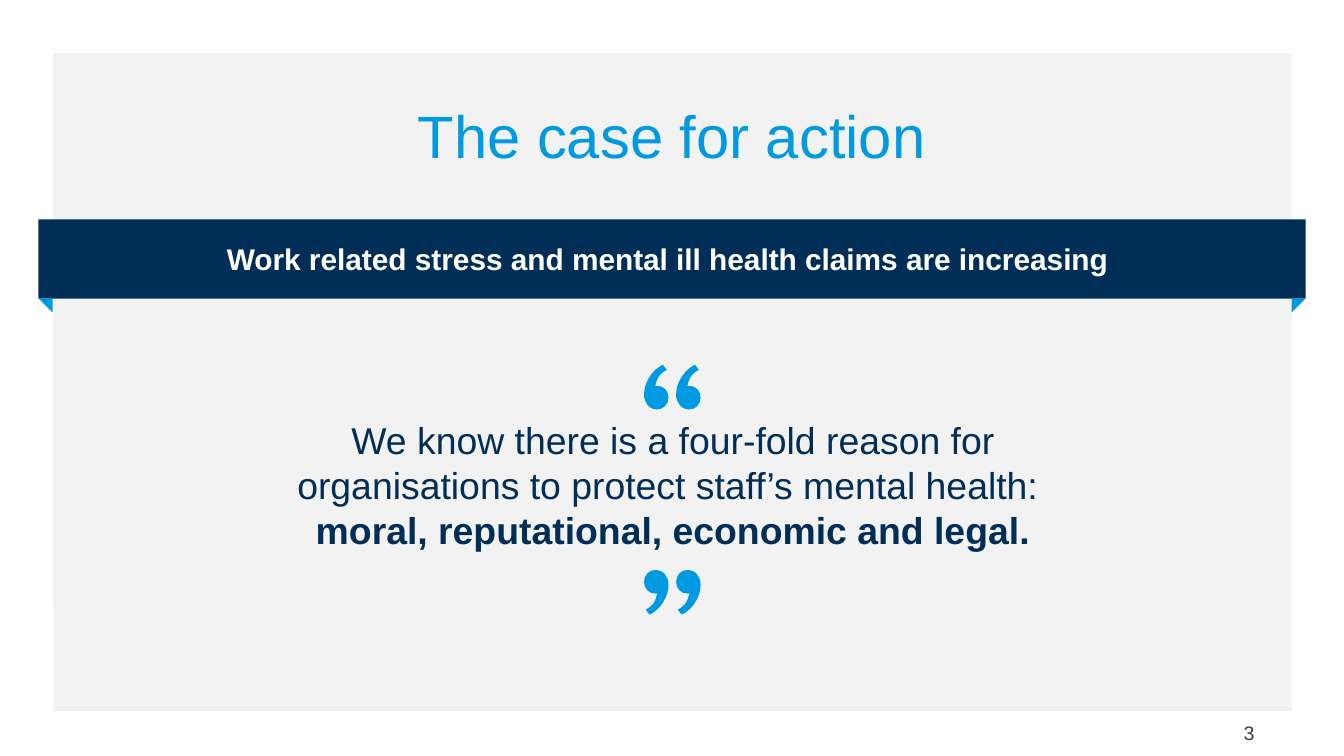
from dataclasses import dataclass

from pptx import Presentation
from pptx.dml.color import RGBColor
from pptx.enum.shapes import MSO_SHAPE
from pptx.enum.text import MSO_ANCHOR, MSO_AUTO_SIZE, PP_ALIGN
from pptx.oxml.ns import qn
from pptx.util import Pt


@dataclass(frozen=True)
class Theme:
    font: str = "Arial"
    pale: RGBColor = RGBColor(0xF2, 0xF2, 0xF2)
    white: RGBColor = RGBColor(0xFF, 0xFF, 0xFF)
    navy: RGBColor = RGBColor(0x00, 0x2E, 0x56)
    blue: RGBColor = RGBColor(0x00, 0x9A, 0xE3)
    grey: RGBColor = RGBColor(0x40, 0x40, 0x40)
    title: float = 32
    quote: float = 20
    band: float = 16
    number: float = 10.5


theme = Theme()


def paint(shape, color):
    shape.shadow.inherit = False
    shape.fill.solid()
    shape.fill.fore_color.rgb = color
    shape.line.fill.background()


def write(shape, text, size, color, align, anchor, low=None):
    frame = shape.text_frame
    frame.word_wrap = True
    frame.auto_size = MSO_AUTO_SIZE.NONE
    frame.vertical_anchor = anchor
    if low is not None:
        frame.margin_left = frame.margin_right = frame.margin_top = 0
        frame.margin_bottom = Pt(low)
    par = frame.paragraphs[0]
    par.text = text
    par.alignment = align
    par.space_before = Pt(0)
    for run in par.runs:
        run.font.name = theme.font
        run.font.size = Pt(size)
        run.font.color.rgb = color
    return par


deck = Presentation()
deck.slide_width, deck.slide_height = Pt(720), Pt(405)
slide = deck.slides.add_slide(deck.slide_layouts[1])
shapes = slide.shapes
title, body = slide.placeholders

# Pale background inside a white frame
slide.background.fill.solid()
slide.background.fill.fore_color.rgb = theme.pale
outer = [(0, 0), (720, 0), (720, 405), (0, 405)]
inner = [(28.4, 28.4), (28.4, 325), (28.8, 325), (28.8, 381), (692, 381), (692, 28.4)]

# One quote mark in points: a start, a line end, then triples of curve points
mark = [
    (10.1, 0), (12.2, 2.7),
    (10.8, 3.4), (9.4, 4.5), (8.1, 6),
    (7, 7.8), (6.4, 9.5), (6, 11.5),
    (6.2, 11.4), (6.3, 11.4), (6.5, 11.4),
    (6.7, 11.3), (6.8, 11.3), (7, 11.3),
    (8.8, 11.3), (10.2, 11.9), (11.4, 13.1),
    (12.5, 14.3), (13.1, 15.8), (13.1, 17.6),
    (13.1, 19.4), (12.5, 20.9), (11.3, 22.2),
    (10.1, 23.4), (8.6, 24), (6.8, 24),
    (4.9, 24), (3.3, 23.2), (2, 21.7),
    (0.7, 20.2), (0, 18.3), (0, 16.1),
    (0, 13), (0.9, 9.9), (2.8, 6.8),
    (4.6, 3.8), (7.1, 1.5), (10.1, 0),
]
pair = [[(345 + gap + x, 195.4 + y) for x, y in mark] for gap in (17.2, 0)]

drawn = []
for paths, color in [([outer, inner], theme.white),
                     (pair, theme.blue), (pair, theme.blue)]:
    pen = None
    for path in paths:
        first, *rest = [(Pt(x), Pt(y)) for x, y in path]
        if pen is None:
            pen = shapes.build_freeform(*first)
        else:
            pen.move_to(*first)
        pen.add_line_segments(rest, close=True)
    drawn.append(pen.convert_to_shape())
    paint(drawn[-1], color)

# Turn each triple of points into a cubic curve
count = len(mark) - 1
for shape in drawn[1:]:
    route = next(shape._element.iter(qn("a:path")))
    lines = route.findall(qn("a:lnTo"))
    for base in (0, count):
        for k in range(base + 1, base + count, 3):
            curve = route.makeelement(qn("a:cubicBezTo"), {})
            lines[k].addprevious(curve)
            for line in lines[k:k + 3]:
                curve.append(line[0])
                route.remove(line)

# The closing pair is the opening pair turned by half a circle
drawn[2].top = Pt(305.3)
drawn[2].rotation = 180

# Title
title.left, title.top, title.width, title.height = Pt(49.7), Pt(48.6), Pt(620.6), Pt(43.2)
par = write(title, "The case for action", theme.title, theme.blue,
            PP_ALIGN.CENTER, MSO_ANCHOR.BOTTOM, 0)
par.line_spacing = 0.9

# Quote
body.left, body.top, body.width, body.height = Pt(49.7), Pt(219.2), Pt(622), Pt(86.4)
quote = ("We know there is a four-fold reason for\v"
         "organisations to protect staff’s mental health: \v"
         "moral, reputational, economic and legal.")
par = write(body, quote, theme.quote, theme.navy,
            PP_ALIGN.CENTER, MSO_ANCHOR.MIDDLE, 5.8)
par.space_after = Pt(2)
par.runs[-1].font.bold = True
props = par._p.get_or_add_pPr()
props.set("marL", "0")
props.set("indent", "0")
props.append(props.makeelement(qn("a:buNone"), {}))

# Ribbon with folded ends
ribbon = shapes.add_group_shape().shapes
band = ribbon.add_shape(MSO_SHAPE.RECTANGLE, Pt(20.6), Pt(117.5), Pt(678.8), Pt(42.5))
paint(band, theme.navy)
par = write(band, "Work related stress and mental ill health claims are increasing ",
            theme.band, theme.white, PP_ALIGN.CENTER, MSO_ANCHOR.MIDDLE)
par.runs[0].font.bold = True
for x, turn in [(20.8, 270), (692, 180)]:
    fold = ribbon.add_shape(MSO_SHAPE.ISOSCELES_TRIANGLE, Pt(x), Pt(160), Pt(7.4), Pt(7.4))
    fold.adjustments[0] = 1
    fold.rotation = turn
    paint(fold, theme.blue)

# Slide number
number = shapes.add_textbox(Pt(615.2), Pt(382.3), Pt(56.9), Pt(23.8))
write(number, "3", theme.number, theme.grey, PP_ALIGN.RIGHT, MSO_ANCHOR.MIDDLE, 2.9)

deck.save("out.pptx")
